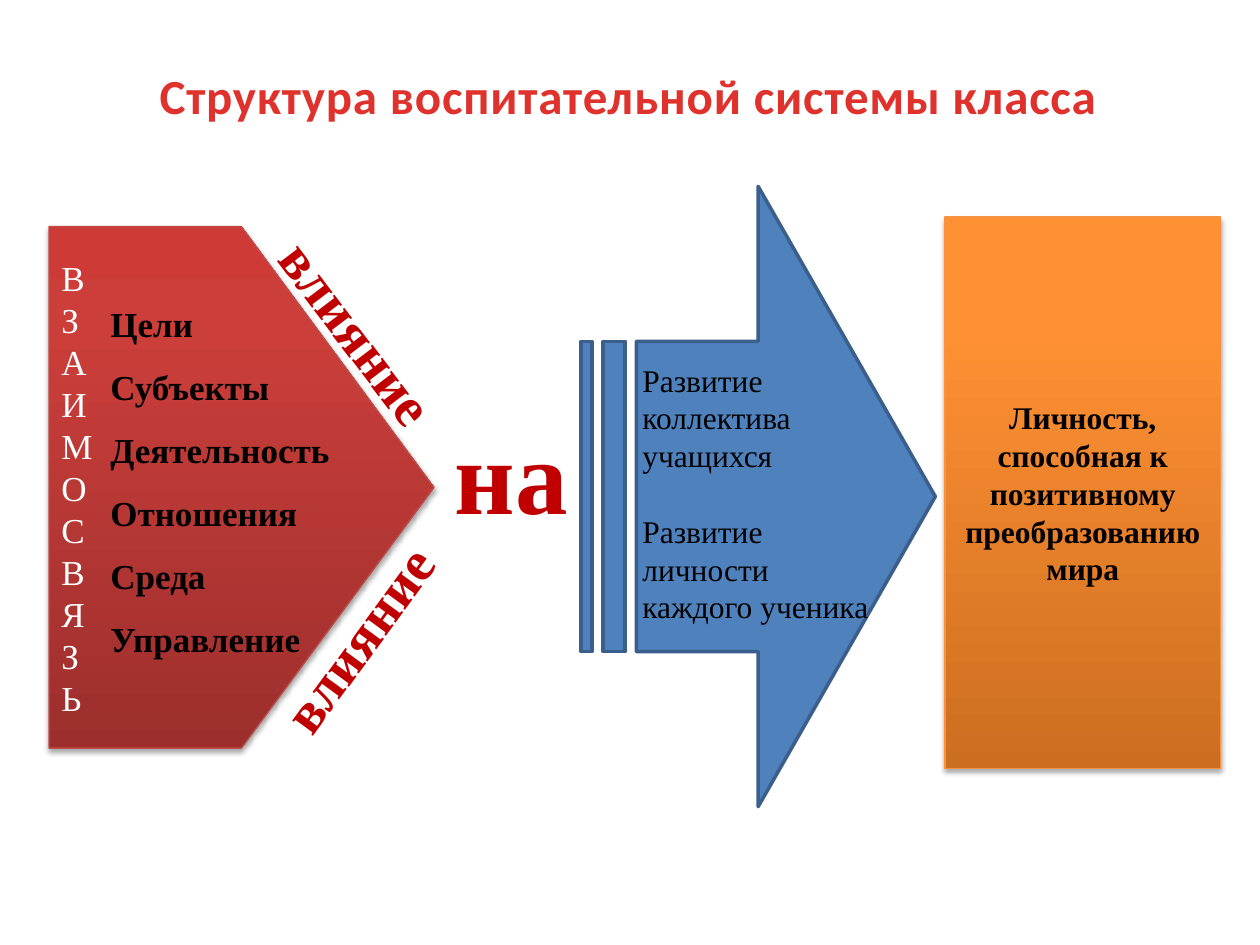
from pptx import Presentation
from pptx.dml.color import RGBColor
from pptx.enum.shapes import MSO_SHAPE
from pptx.enum.text import MSO_ANCHOR, MSO_AUTO_SIZE, PP_ALIGN
from pptx.oxml import parse_xml
from pptx.oxml.ns import nsdecls, qn
from pptx.util import Pt

RED = RGBColor(0xE0, 0x32, 0x2D)
DARK = RGBColor(0xC0, 0x00, 0x00)
BLACK = RGBColor(0x00, 0x00, 0x00)
WHITE = RGBColor(0xFF, 0xFF, 0xFF)
BLUE = RGBColor(0x4F, 0x81, 0xBD)
NAVY = RGBColor(0x3A, 0x5F, 0x8C)
ROSE = RGBColor(0xBF, 0x4C, 0x48)
AMBER = RGBColor(0xF6, 0x92, 0x40)
REDS = [(0, RGBColor(0x9C, 0x2F, 0x2D)), (80, RGBColor(0xCB, 0x3E, 0x3A)),
        (100, RGBColor(0xCE, 0x3B, 0x37))]
GOLDS = [(0, RGBColor(0xCC, 0x6E, 0x20)), (80, RGBColor(0xFF, 0x90, 0x34)),
         (100, RGBColor(0xFF, 0x91, 0x36))]
SERIF = "Times New Roman"


def apply(target, values):
    """Set each named attribute on the target."""
    for name, value in values.items():
        setattr(target, name, value)


def write(shape, lines, size, color, bold=False, face=SERIF, frame=None, **para):
    """Fill a shape with one paragraph per line."""
    text = shape.text_frame
    apply(text, {"word_wrap": True, **(frame or {})})
    text.text = "\n".join(lines)
    for item in text.paragraphs:
        apply(item, {"alignment": PP_ALIGN.LEFT, **para})
        for run in item.runs:
            apply(run.font, {"name": face, "size": Pt(size), "bold": bold})
            run.font.color.rgb = color


def add_text(slide, box, lines, size, color, turn=0, **style):
    """Add a text box, turned by the given degrees."""
    shape = slide.shapes.add_textbox(*map(Pt, box))
    shape.rotation = turn
    frame = {"auto_size": MSO_AUTO_SIZE.SHAPE_TO_FIT_TEXT}
    write(shape, lines, size, color, frame=frame, **style)
    return shape


def add_block(slide, kind, box, fill, edge, width):
    """Add a preset shape with a plain fill and an outline."""
    shape = slide.shapes.add_shape(kind, *map(Pt, box))
    shape.shadow.inherit = False
    shape.fill.solid()
    shape.fill.fore_color.rgb = fill
    shape.line.color.rgb = edge
    shape.line.width = Pt(width)
    return shape


def shade(shape, stops):
    """Give a block an upward gradient and a soft shadow below."""
    props = shape._element.spPr
    marks = "".join(f'<a:gs pos="{spot * 1000}"><a:srgbClr val="{color}"/></a:gs>'
                    for spot, color in stops)
    grad = parse_xml(f'<a:gradFill {nsdecls("a")} rotWithShape="1"><a:gsLst>{marks}'
                     '</a:gsLst><a:lin ang="16200000" scaled="0"/></a:gradFill>')
    props.replace(props.find(qn("a:solidFill")), grad)
    props.find(qn("a:effectLst")).append(parse_xml(
        f'<a:outerShdw {nsdecls("a")} blurRad="{Pt(3.1)}" dist="{Pt(1.8)}" '
        'dir="5400000" rotWithShape="0"><a:srgbClr val="000000">'
        '<a:alpha val="35000"/></a:srgbClr></a:outerShdw>'))


def add_title(slide, words):
    """Place and format the slide title."""
    title = slide.shapes.title
    apply(title, dict(zip(("left", "top", "width", "height"),
                          map(Pt, (84, 34, 557, 41)))))
    frame = {"word_wrap": False, "auto_size": MSO_AUTO_SIZE.SHAPE_TO_FIT_TEXT}
    write(title, [words], 28, RED, True, "Calibri", frame)
    title.text_frame.paragraphs[0].runs[0].font._element.set("spc", "50")


def main():
    """Build the slide and save it."""
    deck = Presentation()
    apply(deck, {"slide_width": Pt(720), "slide_height": Pt(540)})
    slide = deck.slides.add_slide(deck.slide_layouts[5])
    add_title(slide, "Структура воспитательной системы класса")
    middle = {"vertical_anchor": MSO_ANCHOR.MIDDLE}

    system = add_block(slide, MSO_SHAPE.PENTAGON, (28, 129.5, 220, 298), REDS[1][1], ROSE, 0.75)
    shade(system, REDS)
    write(system, "ВЗАИМОСВЯЗЬ", 20, WHITE, frame=middle)
    parts = ["Цели", "Субъекты", "Деятельность", "Отношения", "Среда", "Управление"]
    add_text(slide, (56, 157.5, 158, 225), parts, 20, BLACK, bold=True, line_spacing=1.5)

    for left, top, turn in ((123, 167, 52.8), (122.5, 342, 306.2)):
        add_text(slide, (left, top, 163.5, 46), ["влияние"], 32, DARK, turn,
                 bold=True, alignment=PP_ALIGN.CENTER)
    add_text(slide, (236, 230.5, 112.5, 80), ["на"], 60, DARK,
             bold=True, alignment=PP_ALIGN.CENTER)

    add_block(slide, MSO_SHAPE.STRIPED_RIGHT_ARROW, (332, 106.5, 202.5, 354.5), BLUE, NAVY, 2)
    goals = ["Развитие коллектива учащихся", "Развитие личности каждого ученика"]
    growth = add_text(slide, (360, 202.5, 152, 160), goals, 18, BLACK)
    growth.text_frame.paragraphs[1].space_before = Pt(21.6)

    person = add_block(slide, MSO_SHAPE.FLOWCHART_PROCESS, (540, 124, 157.5, 315),
                       GOLDS[1][1], AMBER, 0.75)
    shade(person, GOLDS)
    write(person, ["Личность, способная к позитивному преобразованию мира"], 18, BLACK,
          True, frame=middle, alignment=PP_ALIGN.CENTER)
    deck.save("out.pptx")


if __name__ == "__main__":
    main()
